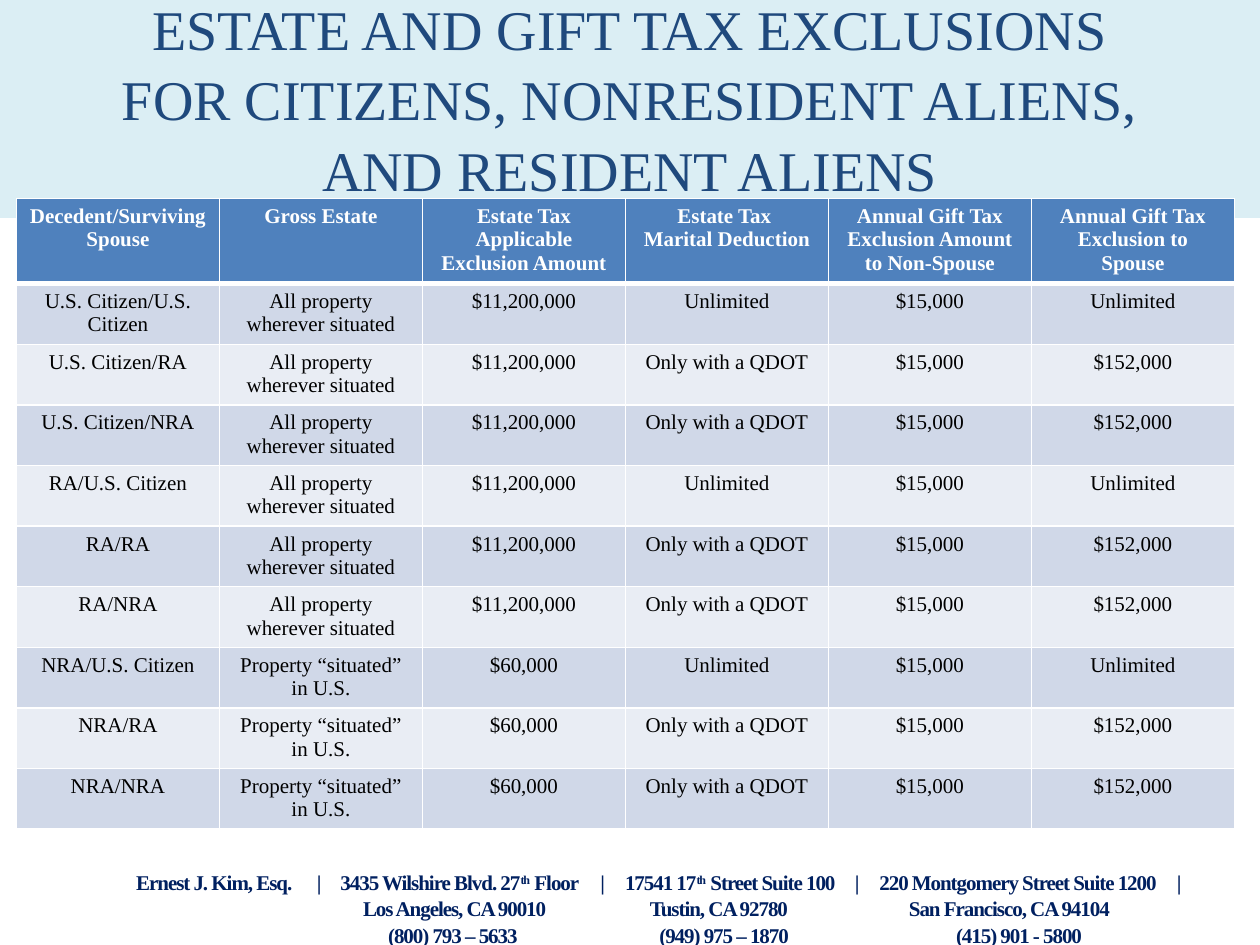
from dataclasses import dataclass

from lxml.etree import SubElement
from pptx import Presentation
from pptx.dml.color import RGBColor
from pptx.enum.shapes import MSO_SHAPE as Shape
from pptx.enum.text import MSO_ANCHOR as Anchor, MSO_AUTO_SIZE as AutoSize, PP_ALIGN as Align
from pptx.oxml import parse_xml
from pptx.oxml.ns import nsdecls, qn
from pptx.util import Pt

FONT = "Times New Roman"
WHITE, BLACK = "FFFFFF", "000000"
BAND, TITLE, HEADER, FOOTER = "DBEEF4", "1F497D", "4F81BD", "002060"
ROW_FILLS = ("D0D8E8", "E9EDF4")
LINE_SPACING = 1.05

HEADINGS = (
    "Decedent/Surviving Spouse", "Gross Estate",
    "Estate Tax Applicable Exclusion Amount", "Estate Tax \vMarital Deduction",
    "Annual Gift Tax Exclusion Amount to Non-Spouse",
    "Annual Gift Tax Exclusion to Spouse",
)
WORLDWIDE = ("All property wherever situated", "$11,200,000")
US_ONLY = ("Property “situated” in U.S.", "$60,000")
CITIZEN_SPOUSE = ("Unlimited", "$15,000", "Unlimited")
ALIEN_SPOUSE = ("Only with a QDOT", "$15,000", "$152,000")


@dataclass
class EstateRule:
    couple: str
    estate: tuple[str, str]
    gifts: tuple[str, str, str]

    def cells(self) -> tuple[str, ...]:
        return (self.couple, *self.estate, *self.gifts)


@dataclass
class FooterLine:
    text: str  # ^ switches superscript on and off
    stops: tuple[float, ...]


RULES = (
    EstateRule("U.S. Citizen/U.S. Citizen", WORLDWIDE, CITIZEN_SPOUSE),
    EstateRule("U.S. Citizen/RA", WORLDWIDE, ALIEN_SPOUSE),
    EstateRule("U.S. Citizen/NRA", WORLDWIDE, ALIEN_SPOUSE),
    EstateRule("RA/U.S. Citizen", WORLDWIDE, CITIZEN_SPOUSE),
    EstateRule("RA/RA", WORLDWIDE, ALIEN_SPOUSE),
    EstateRule("RA/NRA", WORLDWIDE, ALIEN_SPOUSE),
    EstateRule("NRA/U.S. Citizen", US_ONLY, CITIZEN_SPOUSE),
    EstateRule("NRA/RA", US_ONLY, ALIEN_SPOUSE),
    EstateRule("NRA/NRA", US_ONLY, ALIEN_SPOUSE),
)
FOOTER_LINES = (
    FooterLine("Ernest J. Kim, Esq.\t|\t3435 Wilshire Blvd. 27^th^ Floor\t|\t"
               "17541 17^th^ Street Suite 100\t|\t220 Montgomery Street Suite 1200\t|",
               (104.5, 185, 266.5, 339.5, 412, 504, 596)),
    FooterLine("\tLos Angeles, CA 90010\tTustin, CA 92780\tSan Francisco, CA 94104",
               (182, 333, 499)),
    FooterLine("\t(800) 793 – 5633\t(949) 975 – 1870\t(415) 901 - 5800",
               (181, 336, 504.5)),
)


def color(value: str) -> RGBColor:
    return RGBColor.from_string(value)


def style(paragraph, size: float, value: str, bold: bool = False) -> None:
    font = paragraph.font
    font.name, font.size, font.bold = FONT, Pt(size), bold
    font.color.rgb = color(value)


def clear_margins(frame) -> None:
    frame.margin_left = frame.margin_right = frame.margin_top = frame.margin_bottom = 0
    frame.word_wrap = True
    frame.auto_size = AutoSize.NONE


def add_band(slide) -> None:
    band = slide.shapes.add_shape(Shape.RECTANGLE, 0, 0, Pt(720), Pt(124.5))
    band.shadow.inherit = False
    band.fill.solid()
    band.fill.fore_color.rgb = color(BAND)
    band.line.fill.background()


def set_title(slide) -> None:
    title = slide.shapes.title
    title.left, title.top, title.width, title.height = Pt(53.3), Pt(-2.9), Pt(613.4), Pt(116.6)
    frame = title.text_frame
    clear_margins(frame)
    frame.vertical_anchor = Anchor.MIDDLE
    frame.text = ("ESTATE AND GIFT TAX EXCLUSIONS\v"
                  "FOR CITIZENS, NONRESIDENT ALIENS, AND RESIDENT ALIENS")
    paragraph = frame.paragraphs[0]
    paragraph.alignment = Align.CENTER
    paragraph.line_spacing = LINE_SPACING
    style(paragraph, 32, TITLE)
    # The title lies above the band and the table
    slide.shapes._spTree.append(title._element)


def set_borders(cell, top: float, bottom: float) -> None:
    properties = cell._tc.get_or_add_tcPr()
    widths = {"lnL": 1, "lnR": 1, "lnT": top, "lnB": bottom}
    for index, (tag, width) in enumerate(widths.items()):
        properties.insert(index, parse_xml(
            f'<a:{tag} {nsdecls("a")} w="{Pt(width)}"><a:solidFill>'
            f'<a:srgbClr val="{WHITE}"/></a:solidFill></a:{tag}>'))


def add_rules_table(slide) -> None:
    rows = [HEADINGS, *(rule.cells() for rule in RULES)]
    table = slide.shapes.add_table(len(rows), len(HEADINGS), Pt(9.4), Pt(113.5),
                                   Pt(696), Pt(360)).table
    table.horz_banding = False
    for column in table.columns:
        column.width = Pt(116)
    for row_index, texts in enumerate(rows):
        header = row_index == 0
        table.rows[row_index].height = Pt(48.6 if header else 34.65)
        for column_index, text in enumerate(texts):
            cell = table.cell(row_index, column_index)
            cell.text = text
            cell.fill.solid()
            cell.fill.fore_color.rgb = color(HEADER if header else ROW_FILLS[(row_index - 1) % 2])
            set_borders(cell, 3 if row_index == 1 else 1, 3 if header else 1)
            paragraph = cell.text_frame.paragraphs[0]
            paragraph.alignment = Align.CENTER
            style(paragraph, 12, WHITE if header else BLACK, header)


def set_center_tabs(paragraph, stops: tuple[float, ...]) -> None:
    tab_list = SubElement(paragraph._p.get_or_add_pPr(), qn("a:tabLst"))
    for stop in stops:
        SubElement(tab_list, qn("a:tab"), pos=str(Pt(stop)), algn="ctr")


def add_footer(slide) -> None:
    frame = slide.shapes.add_textbox(Pt(77.8), Pt(496.1), Pt(627), Pt(43.9)).text_frame
    clear_margins(frame)
    for index, line in enumerate(FOOTER_LINES):
        paragraph = frame.add_paragraph() if index else frame.paragraphs[0]
        set_center_tabs(paragraph, line.stops)
        paragraph.line_spacing = LINE_SPACING
        style(paragraph, 12, FOOTER, True)
        for part_index, part in enumerate(line.text.split("^")):
            run = paragraph.add_run()
            run.text = part
            properties = run._r.get_or_add_rPr()
            properties.set("spc", "-60")
            if part_index % 2:
                properties.set("baseline", "30000")


def main() -> None:
    presentation = Presentation()
    presentation.slide_width, presentation.slide_height = Pt(720), Pt(540)
    slide = presentation.slides.add_slide(presentation.slide_layouts[5])
    add_band(slide)
    add_rules_table(slide)
    set_title(slide)
    add_footer(slide)
    presentation.save("out.pptx")


if __name__ == "__main__":
    main()
